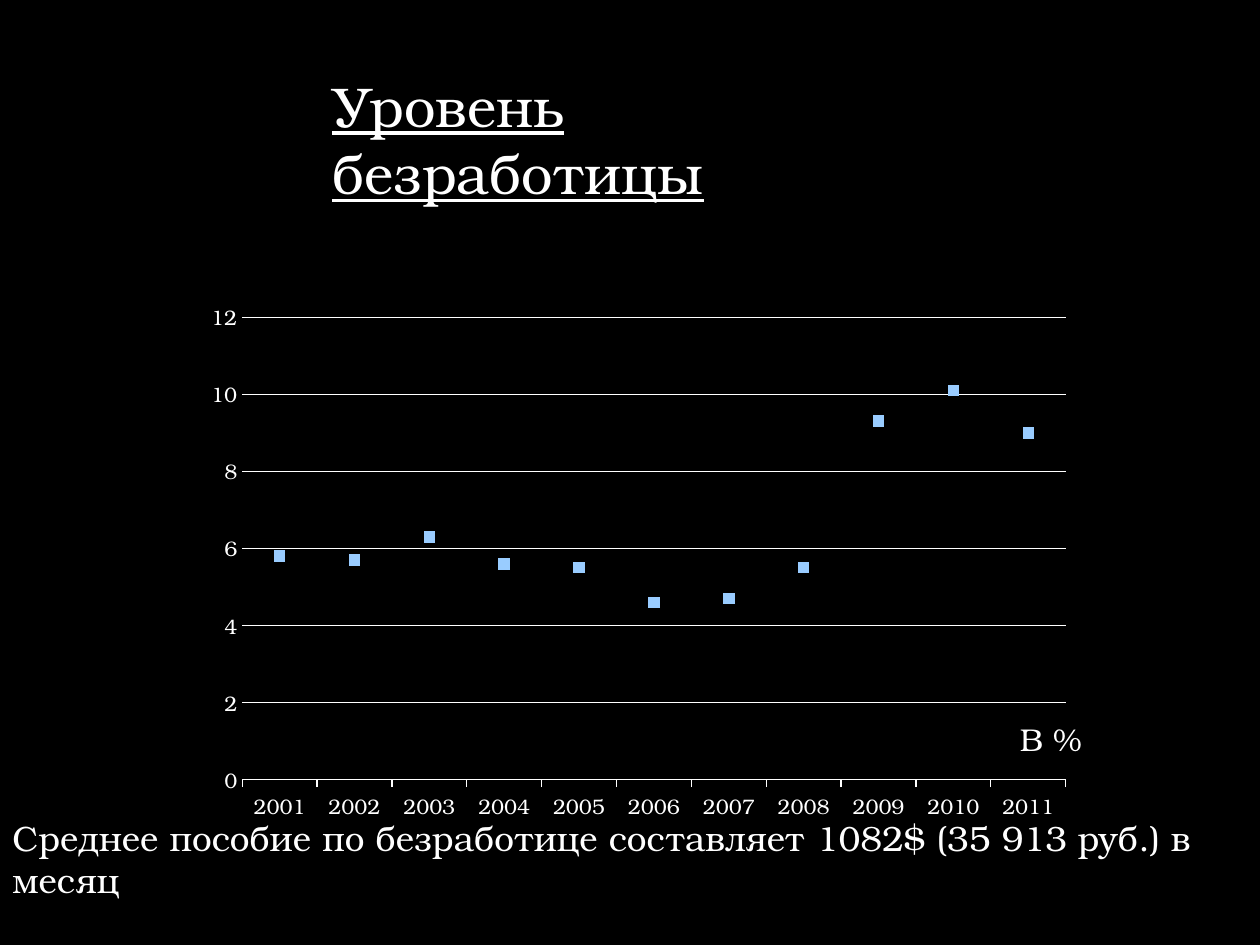
from pptx import Presentation
from pptx.chart.data import CategoryChartData
from pptx.dml.color import RGBColor
from pptx.enum.chart import XL_CHART_TYPE, XL_MARKER_STYLE, XL_TICK_MARK
from pptx.enum.text import MSO_AUTO_SIZE
from pptx.oxml import parse_xml
from pptx.oxml.ns import nsdecls
from pptx.util import Inches, Pt

FACE = "TeX Gyre Bonum"
WHITE = "FFFFFF"


def color(code):
    return RGBColor.from_string(code)


def place(node, index, **spots):
    for old in node.xpath("c:layout"):
        node.remove(old)
    inner = '<c:layoutTarget val="inner"/>' if "w" in spots else ""
    modes = '<c:xMode val="edge"/><c:yMode val="edge"/>'
    sizes = "".join(f'<c:{key} val="{val}"/>' for key, val in spots.items())
    node.insert(index, parse_xml(
        f'<c:layout {nsdecls("c")}><c:manualLayout>{inner}{modes}{sizes}'
        "</c:manualLayout></c:layout>"))


deck = Presentation()
deck.slide_width, deck.slide_height = Inches(10), Inches(7.5)
slide = deck.slides.add_slide(deck.slide_layouts[6])
slide.background.fill.solid()
slide.background.fill.fore_color.rgb = color("000000")

data = CategoryChartData()
data.categories = [str(year) for year in range(2001, 2012)]
data.add_series("Series 1", (5.8, 5.7, 6.3, 5.6, 5.5, 4.6, 4.7, 5.5, 9.3, 10.1, 9))
chart = slide.shapes.add_chart(
    XL_CHART_TYPE.LINE_MARKERS, Inches(1.54), Inches(1.7),
    Inches(7.09), Inches(4.9), data).chart
chart.has_legend = False
chart.font.name = FACE
chart.font.size = Pt(10)
chart.font.color.rgb = color(WHITE)
place(chart.element.xpath("c:chart/c:plotArea")[0], 0, x=0.054, y=0.167, w=0.924, h=0.749)

chart.has_title = True
title = chart.chart_title
para = title.text_frame.paragraphs[0]
para.text = "В %"
font = para.runs[0].font
font.name, font.size, font.bold = FACE, Pt(18), False
font.color.rgb = color(WHITE)
place(title.element, 1, x=0.92, y=0.8)

plot = chart.plots[0]
plot.vary_by_categories = False
rate = plot.series[0]
rate.smooth = False
rate.format.line.fill.background()
mark = rate.marker
mark.style, mark.size = XL_MARKER_STYLE.SQUARE, 6
mark.format.fill.solid()
mark.format.fill.fore_color.rgb = color("99CCFF")
mark.format.line.fill.background()

years, scale = chart.category_axis, chart.value_axis
for axis, tick in ((years, XL_TICK_MARK.OUTSIDE), (scale, XL_TICK_MARK.NONE)):
    axis.major_tick_mark = tick
    axis.minor_tick_mark = XL_TICK_MARK.NONE
    font = axis.tick_labels.font
    font.name, font.size = FACE, Pt(12)
    font.color.rgb = color(WHITE)
scale.minimum_scale, scale.maximum_scale, scale.major_unit = 0, 12, 2
scale.format.line.fill.background()
scale.has_major_gridlines = True
for line in (years.format.line, scale.major_gridlines.format.line):
    line.width = Pt(0.75)
    line.color.rgb = color(WHITE)

for left, top, width, height, text, size, under in (
    (0, 6.43, 9.82, 0.44,
     "Среднее пособие по безработице составляет 1082$ (35 913 руб.) в месяц", 20, False),
    (2.54, 0.52, 4.73, 0.64, "Уровень безработицы", 32, True),
):
    box = slide.shapes.add_textbox(Inches(left), Inches(top), Inches(width), Inches(height))
    frame = box.text_frame
    frame.word_wrap = True
    frame.auto_size = MSO_AUTO_SIZE.SHAPE_TO_FIT_TEXT
    frame.text = text
    font = frame.paragraphs[0].runs[0].font
    font.name, font.size, font.underline = FACE, Pt(size), under
    font.color.rgb = color(WHITE)

deck.save("out.pptx")
